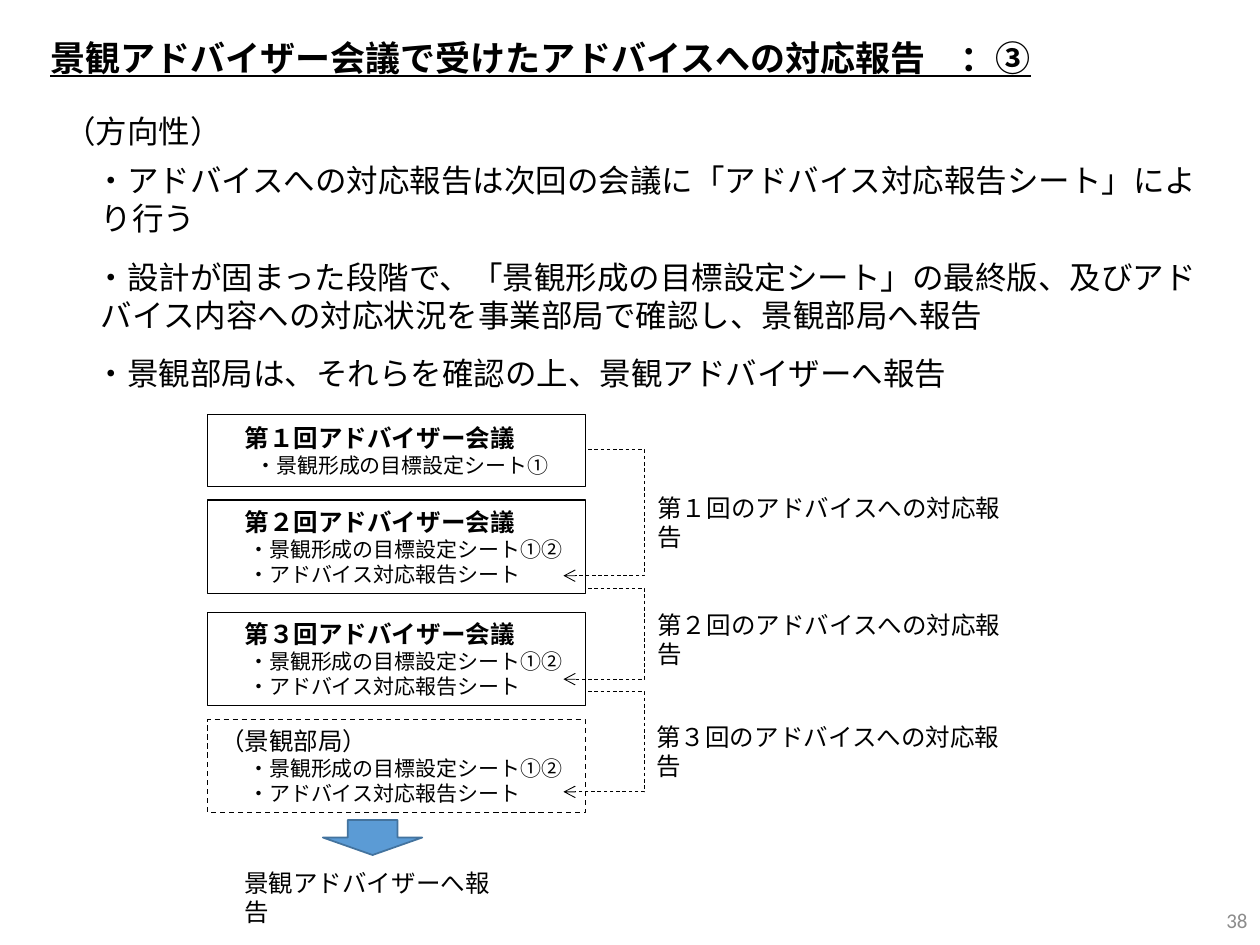
from lxml import etree
from pptx import Presentation
from pptx.dml.color import RGBColor
from pptx.enum import dml, shapes, text
from pptx.oxml.ns import qn
from pptx.util import Pt

JAPANESE = "Noto Sans CJK JP"


def rgb(value):
    return RGBColor.from_string(value)


def add_span(para, content, size, font, bold=False, color="000000"):
    span = para.add_run()
    span.text = content
    span.font.size = Pt(size)
    span.font.name = font
    span.font.bold = bold
    span.font.color.rgb = rgb(color)
    if font == JAPANESE:
        etree.SubElement(span._r.get_or_add_rPr(), qn("a:ea"), typeface=font)
    return span


deck = Presentation()
deck.slide_width, deck.slide_height = Pt(720), Pt(540)
page = deck.slides.add_slide(deck.slide_layouts[1])

# Title and direction list
title, body = page.shapes.title, page.placeholders[1]
for box, left, top, width, height in ((title, 21.5, 15, 610, 32),
                                      (body, 29.5, 49.5, 675.5, 163)):
    box.left, box.top, box.width, box.height = Pt(left), Pt(top), Pt(width), Pt(height)
    box.text_frame.auto_size = text.MSO_AUTO_SIZE.NONE
    box.text_frame.vertical_anchor = text.MSO_ANCHOR.TOP
    box.text_frame.word_wrap = True

para = title.text_frame.paragraphs[0]
para.alignment = text.PP_ALIGN.LEFT
para.line_spacing = Pt(26)
heading = add_span(para, "景観アドバイザー会議で受けたアドバイスへの対応報告　：③", 20, JAPANESE, True)
heading.font.underline = True

directions = [
    ("（方向性）", 32.5, 0, 0, 0),
    ("・アドバイスへの対応報告は次回の会議に「アドバイス対応報告シート」により行う", 21.7, 6, 21, -3),
    ("・設計が固まった段階で、「景観形成の目標設定シート」の最終版、及びアドバイス内容への"
     "対応状況を事業部局で確認し、景観部局へ報告", 21.7, 12, 21, -3),
    ("・景観部局は、それらを確認の上、景観アドバイザーへ報告", 21.7, 12, 21, -3),
]
for index, (content, pitch, before, margin, indent) in enumerate(directions):
    para = body.text_frame.paragraphs[0] if index == 0 else body.text_frame.add_paragraph()
    props = para._p.get_or_add_pPr()
    props.set("marL", str(Pt(margin)))
    props.set("indent", str(Pt(indent)))
    etree.SubElement(props, qn("a:buNone"))
    para.line_spacing, para.space_before = Pt(pitch), Pt(before)
    add_span(para, content, 18, JAPANESE)

# Meeting boxes: each one covers the start of the arrow that leaves it
sheet, report = "・景観形成の目標設定シート", "・アドバイス対応報告シート"
meetings = [
    (236.9, 41, "第１回", [sheet + "①"]),
    (285.8, 53.3, "第２回", [sheet + "①②", report]),
    (349.9, 53.3, "第３回", [sheet + "①②", report]),
    (411.1, 53.3, None, [sheet + "①②", report]),
]
arrows = [(257, 329), (336.2, 388.1), (395.3, 452.5)]
for index in reversed(range(len(meetings))):
    top, height, number, items = meetings[index]
    if index < len(arrows):
        start, end = arrows[index]
        path = page.shapes.build_freeform(Pt(321.8), Pt(start), scale=1.0)
        path.add_line_segments([(Pt(368.3), Pt(start)), (Pt(368.3), Pt(end)),
                                (Pt(322), Pt(end))], close=False)
        arrow = path.convert_to_shape()
        arrow.shadow.inherit = False
        arrow.fill.background()
        arrow.line.color.rgb = rgb("000000")
        arrow.line.width = Pt(0.5)
        arrow.line.dash_style = dml.MSO_LINE.DASH
        etree.SubElement(arrow.line._get_or_add_ln(), qn("a:tailEnd"), type="arrow")

    box = page.shapes.add_shape(shapes.MSO_SHAPE.RECTANGLE, Pt(118.7), Pt(top), Pt(215.8), Pt(height))
    box.shadow.inherit = False
    box.fill.solid()
    box.fill.fore_color.rgb = rgb("FFFFFF")
    box.line.color.rgb = rgb("000000")
    box.line.width = Pt(0.75)
    frame = box.text_frame
    frame.word_wrap = True
    frame.margin_right = Pt(2)
    para = frame.paragraphs[0]
    para.alignment = text.PP_ALIGN.LEFT
    if number:
        para._p.get_or_add_pPr().set("marL", str(Pt(14)))
        for content, font in ((number, "Arial"), ("アドバイザー", "Calibri"), ("会議", "Arial")):
            add_span(para, content, 14, font, True)
    else:
        box.line.dash_style = dml.MSO_LINE.DASH
        add_span(para, "（景観部局）", 14, "Arial")
    for item in items:
        para = frame.add_paragraph()
        para.alignment = text.PP_ALIGN.LEFT
        para._p.get_or_add_pPr().set("marL", str(Pt(20 if index == 0 else 16)))
        add_span(para, item, 12, "Arial")

# Final report arrow
down = page.shapes.add_shape(shapes.MSO_SHAPE.DOWN_ARROW, Pt(184.5), Pt(468.6), Pt(56.8), Pt(20))
down.shadow.inherit = False
down.fill.solid()
down.fill.fore_color.rgb = rgb("5B9BD5")
down.line.color.rgb = rgb("43739E")
down.line.width = Pt(1)

# Captions and page number
captions = [
    ("第１回のアドバイスへの対応報告", 368.6, 278, 212.4),
    ("第２回のアドバイスへの対応報告", 368.6, 345, 212.4),
    ("第３回のアドバイスへの対応報告", 368, 409, 212.4),
    ("景観アドバイザーへ報告", 132.5, 492.5, 161.3),
]
for content, left, top, width in captions:
    box = page.shapes.add_textbox(Pt(left), Pt(top), Pt(width), Pt(24.5))
    box.text_frame.word_wrap = True
    add_span(box.text_frame.paragraphs[0], content, 14, "Calibri")

box = page.shapes.add_textbox(Pt(558), Pt(511.2), Pt(162), Pt(28.8))
box.text_frame.word_wrap = True
box.text_frame.vertical_anchor = text.MSO_ANCHOR.MIDDLE
para = box.text_frame.paragraphs[0]
para.alignment = text.PP_ALIGN.RIGHT
add_span(para, "38", 12, "Calibri", color="8C8C8C")

deck.save("out.pptx")
